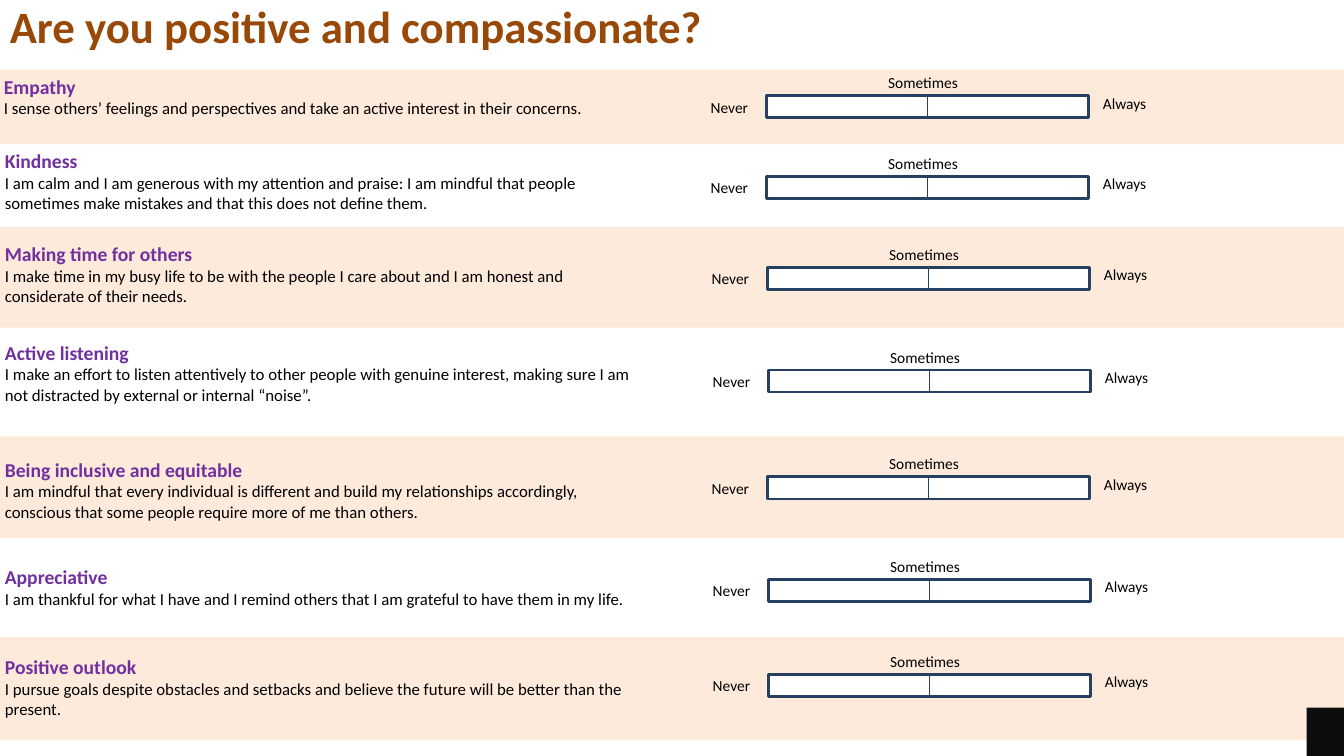
"""Build the self-assessment slide on being positive and compassionate."""
from dataclasses import dataclass

from lxml import etree
from pptx import Presentation
from pptx.dml.color import RGBColor
from pptx.enum.shapes import MSO_CONNECTOR, MSO_SHAPE
from pptx.enum.text import PP_ALIGN
from pptx.oxml.ns import qn
from pptx.shapes.autoshape import Shape
from pptx.shapes.group import GroupShape
from pptx.slide import Slide
from pptx.text.text import _Paragraph
from pptx.util import Inches, Pt

RECTANGLE = MSO_SHAPE.RECTANGLE
STRAIGHT = MSO_CONNECTOR.STRAIGHT
LEFT = PP_ALIGN.LEFT
TOP_SIDE, BOTTOM_SIDE = 0, 2

FONT = "Calibri"
BROWN, PURPLE, NAVY = "984807", "7030A0", "254061"
PEACH, WHITE, BLACK, CHARCOAL = "FDEADA", "FFFFFF", "000000", "0D0D0D"
SLIDE_WIDTH, SLIDE_HEIGHT = 13.33, 7.5
BAR_WIDTH, BAR_HEIGHT = 3.2, 0.22
LABEL_HEIGHT = 0.29


@dataclass(frozen=True)
class Band:
    top: float
    height: float


@dataclass(frozen=True)
class Trait:
    name: str
    statement: str
    top: float
    width: float
    height: float
    bar_left: float
    bar_top: float
    left: float = -0.05


@dataclass(frozen=True)
class ScaleLabel:
    text: str
    dx: float
    dy: float
    width: float


BANDS = [Band(0.69, 0.74), Band(2.25, 1.0), Band(4.33, 1.01), Band(6.32, 1.02)]

SCALE_LABELS = [
    ScaleLabel("Never", -0.65, -0.03, 0.58),
    ScaleLabel("Always", 3.24, -0.07, 0.64),
    ScaleLabel("Sometimes", 1.11, -0.27, 0.9),
]

TRAITS = [
    Trait("Empathy",
          "I sense others’ feelings and perspectives and take an active interest in their concerns.",
          0.69, 6.43, 0.54, 7.6, 0.95, left=-0.06),
    Trait("Kindness",
          "I am calm and I am generous with my attention and praise: I am mindful that people "
          "sometimes make mistakes and that this does not define them.",
          1.43, 6.4, 0.74, 7.6, 1.75),
    Trait("Making time for others",
          "I make time in my busy life to be with the people I care about and I am honest and "
          "considerate of their needs.",
          2.35, 6.4, 0.74, 7.61, 2.65),
    Trait("Active listening",
          "I make an effort to listen attentively to other people with genuine interest, making "
          "sure I am not distracted by external or internal “noise”.",
          3.33, 6.42, 0.74, 7.62, 3.67),
    Trait("Being inclusive and equitable",
          "I am mindful that every individual is different and build my relationships "
          "accordingly, conscious that some people require more of me than others.",
          4.49, 6.51, 0.74, 7.61, 4.73),
    Trait("Appreciative",
          "I am thankful for what I have and I remind others that I am grateful to have them "
          "in my life.",
          5.56, 6.67, 0.54, 7.62, 5.75),
    Trait("Positive outlook",
          "I pursue goals despite obstacles and setbacks and believe the future will be better "
          "than the present.",
          6.45, 6.72, 0.74, 7.62, 6.69),
]


def rgb(value: str) -> RGBColor:
    return RGBColor.from_string(value)


def style(paragraph: _Paragraph, text: str, size: float, color: str, bold: bool = False) -> None:
    paragraph.text = text
    paragraph.alignment = LEFT
    font = paragraph.font
    font.name, font.size, font.bold = FONT, Pt(size), bold
    font.color.rgb = rgb(color)


def add_block(parent: Slide | GroupShape, left: float, top: float, width: float,
              height: float, fill: str) -> Shape:
    block = parent.shapes.add_shape(
        RECTANGLE, Inches(left), Inches(top), Inches(width), Inches(height))
    block.shadow.inherit = False
    block.fill.solid()
    block.fill.fore_color.rgb = rgb(fill)
    block.line.fill.background()
    return block


def add_text(parent: Slide | GroupShape, left: float, top: float, width: float,
             height: float, wrap: bool = True) -> Shape:
    box = parent.shapes.add_textbox(Inches(left), Inches(top), Inches(width), Inches(height))
    box.text_frame.word_wrap = wrap
    return box


def add_title(slide: Slide, text: str) -> None:
    heading = add_text(slide, 0, 0, 11.5, 0.86).text_frame.paragraphs[0]
    style(heading, text, 32, BROWN, bold=True)
    heading.line_spacing = 0.9


def add_trait(slide: Slide, trait: Trait) -> None:
    frame = add_text(slide, trait.left, trait.top, trait.width, trait.height).text_frame
    style(frame.paragraphs[0], trait.name, 14, PURPLE, bold=True)
    style(frame.add_paragraph(), trait.statement, 12, BLACK)


def add_scale(slide: Slide, left: float, top: float) -> None:
    scale = slide.shapes.add_group_shape()
    bar = add_block(scale, left, top, BAR_WIDTH, BAR_HEIGHT, WHITE)
    bar.line.color.rgb = rgb(NAVY)
    bar.line.width = Pt(2)
    for label in SCALE_LABELS:
        box = add_text(scale, left + label.dx, top + label.dy, label.width, LABEL_HEIGHT,
                       wrap=False)
        style(box.text_frame.paragraphs[0], label.text, 11, BLACK)
    middle = Inches(left + BAR_WIDTH / 2)
    divider = scale.shapes.add_connector(
        STRAIGHT, middle, Inches(top + BAR_HEIGHT), middle, Inches(top))
    divider.begin_connect(bar, BOTTOM_SIDE)
    divider.end_connect(bar, TOP_SIDE)
    divider.line.color.rgb = rgb(NAVY)
    divider.line.width = Pt(1.25)
    etree.SubElement(divider.element.spPr, qn("a:effectLst"))


def main() -> None:
    presentation = Presentation()
    presentation.slide_width = Inches(SLIDE_WIDTH)
    presentation.slide_height = Inches(SLIDE_HEIGHT)
    slide = presentation.slides.add_slide(presentation.slide_layouts[6])
    for band in BANDS:
        add_block(slide, 0, band.top, SLIDE_WIDTH, band.height, PEACH)
    add_title(slide, "Are you positive and compassionate?")
    for trait in TRAITS:
        add_trait(slide, trait)
        add_scale(slide, trait.bar_left, trait.bar_top)
    add_block(slide, 12.96, 7.02, 0.37, 0.48, CHARCOAL)
    presentation.save("out.pptx")


if __name__ == "__main__":
    main()
